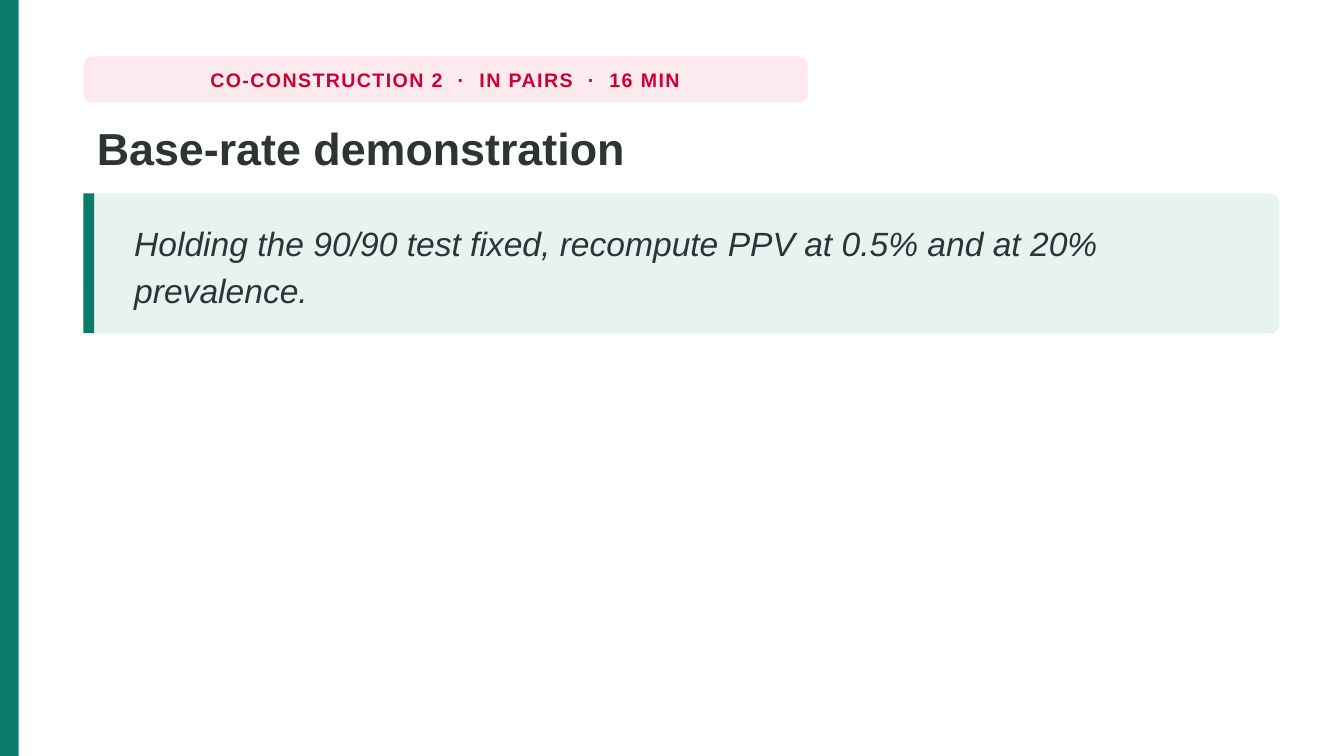
from pptx import Presentation
from pptx import util as u
from pptx.dml import color
from pptx.enum import shapes, text

LABEL = "CO-CONSTRUCTION 2  ·  IN PAIRS  ·  16 MIN"
TITLE = "Base-rate demonstration"
TASK = "Holding the 90/90 test fixed, recompute PPV at 0.5% and at 20% prevalence."

TEAL, MINT, ROSE, RED, INK = "0B7B6B", "E6F3F0", "FDEAEF", "CC0033", "2D3436"
WIDTH = 10
HEIGHT = WIDTH * 9 / 16
LEFT, CONTENT = 0.62, 8.9
CARD_TOP, CARD_HEIGHT = 1.44, 1.04
PILL_RADIUS, CARD_RADIUS = 0.06, 0.07
INSET_LEFT, INSET_RIGHT, INSET_Y = 0.28, 0.27, 0.05


def rgb(value):
    return color.RGBColor.from_string(value)


def inches(*lengths):
    return [u.Inches(length) for length in lengths]


def add_block(page, area, fill, radius=0):
    kind = shapes.MSO_SHAPE.ROUNDED_RECTANGLE if radius else shapes.MSO_SHAPE.RECTANGLE
    block = page.shapes.add_shape(kind, *inches(*area))
    block.shadow.inherit = False
    block.fill.solid()
    block.fill.fore_color.rgb = rgb(fill)
    block.line.fill.background()
    if radius:
        block.adjustments[0] = radius / min(area[2:])
    return block


def write(box, words, size, ink, align=text.PP_ALIGN.LEFT, anchor=text.MSO_ANCHOR.MIDDLE,
          spacing=1.0, wrap=True, bold=False, italic=False):
    frame = box.text_frame
    frame.text = words
    frame.word_wrap = wrap
    frame.auto_size = text.MSO_AUTO_SIZE.NONE
    frame.vertical_anchor = anchor
    para = frame.paragraphs[0]
    para.alignment = align
    para.line_spacing = spacing
    span = para.runs[0]
    span.font.name = "Arial"
    span.font.size = u.Pt(size)
    span.font.bold = bold
    span.font.italic = italic
    span.font.color.rgb = rgb(ink)
    return span


deck = Presentation()
deck.slide_width, deck.slide_height = inches(WIDTH, HEIGHT)
page = deck.slides.add_slide(deck.slide_layouts[5])

add_block(page, (0, 0, 0.14, HEIGHT), TEAL)

pill = add_block(page, (LEFT, 0.42, 5.39, 0.34), ROSE, PILL_RADIUS)
label = write(pill, LABEL, 10.5, RED, text.PP_ALIGN.CENTER, wrap=False, bold=True)
label.font._element.set("spc", "80")

title = page.shapes.title
title.left, title.top, title.width, title.height = inches(LEFT, 0.84, CONTENT, 0.56)
write(title, TITLE, 24, INK, anchor=text.MSO_ANCHOR.TOP, spacing=1.02, bold=True)

add_block(page, (LEFT, CARD_TOP, CONTENT, CARD_HEIGHT), MINT, CARD_RADIUS)
add_block(page, (LEFT, CARD_TOP, 0.08, CARD_HEIGHT), TEAL)
task = page.shapes.add_textbox(*inches(
    LEFT + INSET_LEFT, CARD_TOP + INSET_Y,
    CONTENT - INSET_LEFT - INSET_RIGHT, CARD_HEIGHT - 2 * INSET_Y))
write(task, TASK, 18, INK, spacing=1.16, italic=True)

deck.save("out.pptx")
